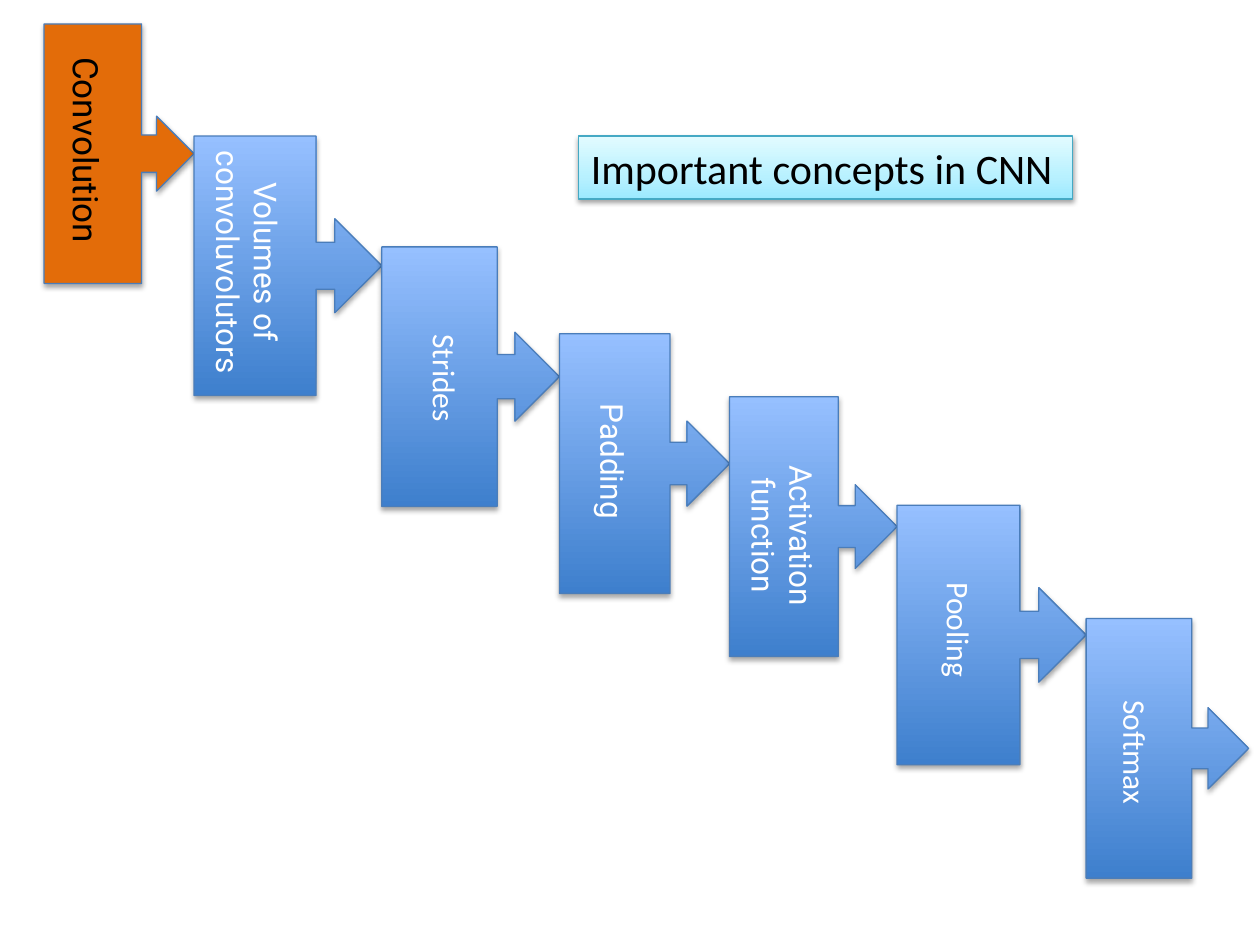
"""Build a slide showing the important concepts in CNN as a descending chain of callouts."""

from copy import deepcopy
from dataclasses import dataclass

from lxml.etree import SubElement
from pptx import Presentation
from pptx.dml.color import RGBColor
from pptx.enum.shapes import MSO_SHAPE
from pptx.enum.text import MSO_AUTO_SIZE, PP_ALIGN
from pptx.oxml.ns import qn
from pptx.shapes.autoshape import Shape
from pptx.slide import Slide
from pptx.util import Inches, Pt

Stops = tuple[tuple[float, str], ...]


@dataclass(frozen=True)
class Theme:
    callout_stops: Stops = ((0, "3E7FCD"), (1, "96C0FF"))
    title_stops: Stops = ((0, "9BE9FF"), (0.35, "B8F1FF"), (1, "E2FBFF"))
    highlight: str = "E36C09"
    callout_line: str = "4A7DBA"
    title_line: str = "45A9C4"
    dark: str = "000000"
    light: str = "FFFFFF"
    body_font: str = "Calibri"
    accent_font: str = "Roboto"
    title_size: int = 24
    first_size: int = 20
    step_size: int = 18


@dataclass(frozen=True)
class Step:
    lines: tuple[str, ...]
    top: float
    width: float
    caption_left: float
    caption_top: float
    font: str
    first: bool = False


THEME = Theme()
CHAIN_LEFT = 0.35
CALLOUT_HEIGHT = 2.06
STEPS = (
    Step(("Convolution",), 0.19, 1.19, -0.18, 0.99, THEME.accent_font, True),
    Step(("Volumes of convoluvolutors",), 1.08, 1.49, 0.96, 1.83, THEME.accent_font),
    Step(("Strides",), 1.96, 1.41, 2.38, 2.75, THEME.body_font),
    Step(("Padding",), 2.65, 1.35, 3.71, 3.41, THEME.accent_font),
    Step(("Activation", "function"), 3.15, 1.33, 5.21, 4.0, THEME.accent_font),
    Step(("Pooling",), 4.01, 1.5, 6.46, 4.75, THEME.body_font),
    Step(("Softmax",), 4.91, 1.29, 7.86, 5.72, THEME.body_font),
)


def fill_gradient(shape: Shape, stops: Stops) -> None:
    """Fill a shape with colour stops rising from bottom to top."""
    shape.fill.gradient()
    shape.fill.gradient_angle = 90
    stop_list = next(shape._element.spPr.iter(qn("a:gsLst")))
    for _ in range(len(stops) - len(stop_list)):
        stop_list.append(deepcopy(stop_list[-1]))
    for stop, (position, colour) in zip(shape.fill.gradient_stops, stops):
        stop.position = position
        stop.color.rgb = RGBColor.from_string(colour)


def outline(shape: Shape, colour: str, distance: float, opacity: int) -> None:
    """Give a shape a thin line and a soft shadow below it."""
    shape.line.color.rgb = RGBColor.from_string(colour)
    shape.line.width = Pt(0.75)
    shape.shadow.inherit = False
    effects = shape._element.spPr.find(qn("a:effectLst"))
    shadow = SubElement(
        effects, qn("a:outerShdw"), blurRad=str(Pt(3.1)), dist=str(Pt(distance)),
        dir="5400000", rotWithShape="0",
    )
    tint = SubElement(shadow, qn("a:srgbClr"), val=THEME.dark)
    SubElement(tint, qn("a:alpha"), val=str(opacity * 1000))


def write_lines(
    box: Shape, lines: tuple[str, ...], font: str, size: int, colour: str, align: PP_ALIGN
) -> None:
    """Write one paragraph per line in a single style."""
    frame = box.text_frame
    frame.text = "\n".join(lines)
    for paragraph in frame.paragraphs:
        paragraph.alignment = align
        paragraph.font.name = font
        paragraph.font.size = Pt(size)
        paragraph.font.color.rgb = RGBColor.from_string(colour)


def draw_callout(page: Slide, step: Step, left: float) -> None:
    """Draw the arrow callout of one step."""
    callout = page.shapes.add_shape(
        MSO_SHAPE.RIGHT_ARROW_CALLOUT,
        Inches(left), Inches(step.top), Inches(step.width), Inches(CALLOUT_HEIGHT),
    )
    if step.first:
        callout.fill.solid()
        callout.fill.fore_color.rgb = RGBColor.from_string(THEME.highlight)
    else:
        fill_gradient(callout, THEME.callout_stops)
    outline(callout, THEME.callout_line, 1.8, 35)


def draw_title(page: Slide) -> None:
    """Draw the framed title."""
    title = page.shapes.add_textbox(Inches(4.59), Inches(1.08), Inches(3.92), Inches(0.5))
    fill_gradient(title, THEME.title_stops)
    outline(title, THEME.title_line, 1.6, 37)
    title.text_frame.word_wrap = False
    title.text_frame.auto_size = MSO_AUTO_SIZE.SHAPE_TO_FIT_TEXT
    write_lines(
        title, ("Important concepts in CNN",), THEME.body_font,
        THEME.title_size, THEME.dark, PP_ALIGN.LEFT,
    )


def draw_caption(page: Slide, step: Step) -> None:
    """Draw the vertical caption of one step."""
    box = page.shapes.add_textbox(
        Inches(step.caption_left), Inches(step.caption_top),
        Inches(1.77 if step.first else 2.31), Inches(0.5),
    )
    box.rotation = 90
    frame = box.text_frame
    frame.word_wrap = True
    frame.margin_left = frame.margin_right = Inches(0.1)
    frame.margin_top = frame.margin_bottom = Inches(0.1)
    write_lines(
        box, step.lines, step.font,
        THEME.first_size if step.first else THEME.step_size,
        THEME.dark if step.first else THEME.light,
        PP_ALIGN.LEFT if step.first else PP_ALIGN.CENTER,
    )


def main() -> None:
    """Build and save the deck."""
    deck = Presentation()
    deck.slide_width, deck.slide_height = Inches(10), Inches(7.5)
    page = deck.slides.add_slide(deck.slide_layouts[6])
    left = CHAIN_LEFT
    for step in STEPS:
        draw_callout(page, step, left)
        left += step.width
    draw_title(page)
    for step in STEPS:
        draw_caption(page, step)
    deck.save("out.pptx")


if __name__ == "__main__":
    main()
